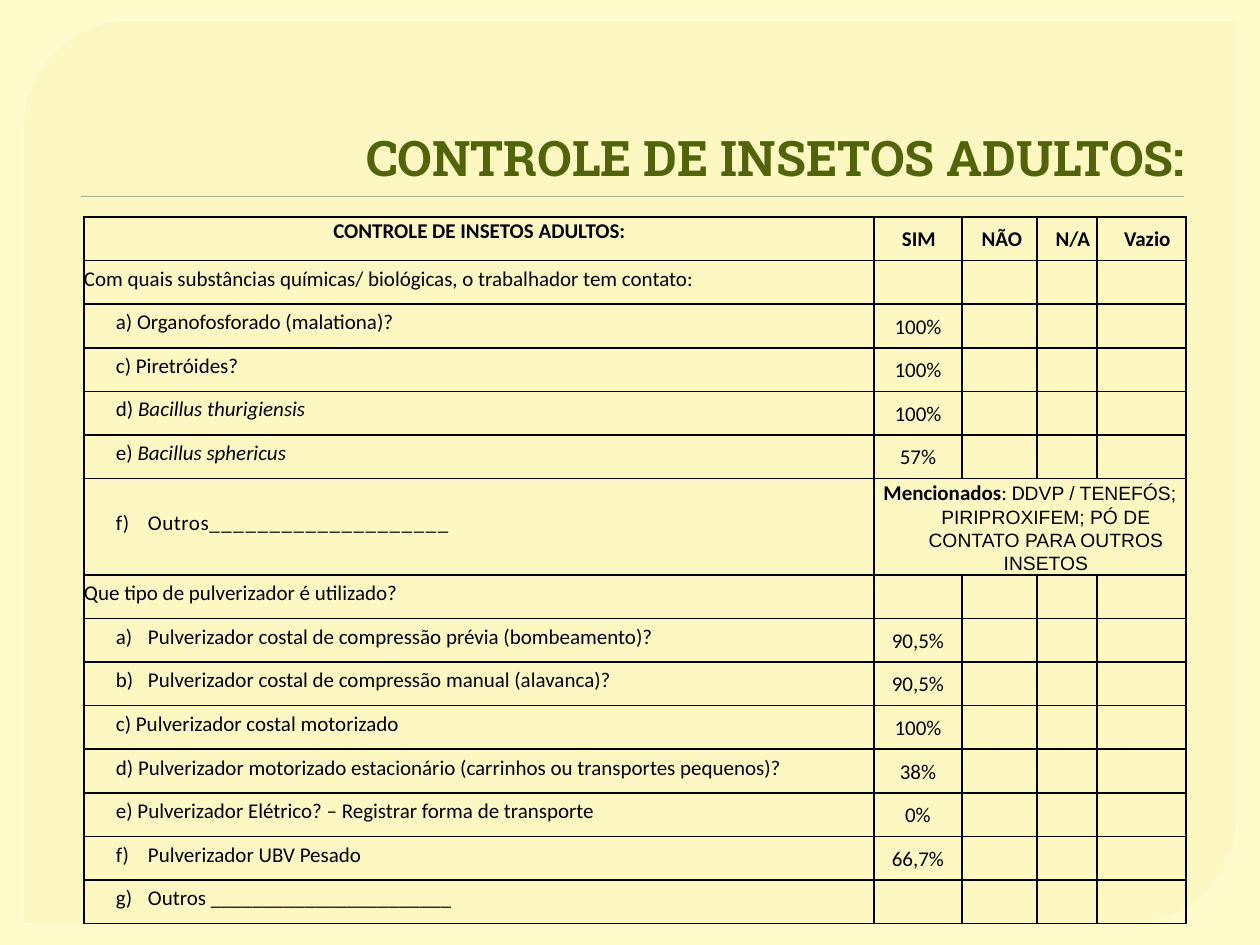
from lxml.etree import SubElement
from pptx import Presentation
from pptx.dml.color import RGBColor
from pptx.enum.shapes import MSO_SHAPE
from pptx.enum.text import MSO_ANCHOR, MSO_AUTO_SIZE, PP_ALIGN
from pptx.oxml.ns import qn
from pptx.util import Emu, Pt

SCALE = 914400 / 126
HANG = -32
COLUMNS = [790, 88, 75, 60, 89]
ROW_HEIGHT, MENTIONED_HEIGHT = 611 / 14, 96
HEADERS = [("CONTROLE DE INSETOS ADULTOS:", 33), ("SIM", 34), ("NÃO", 37), ("N/A", 44), ("Vazio", 44)]
MENTIONED = [
    ("Mencionados", {"bold": True}),
    (": D", {}),
    ("DVP / TENEFÓS; PIRIPROXIFEM; PÓ DE CONTATO PARA OUTROS INSETOS", {"size": Pt(11), "name": "Arial"}),
]
SUBSTANCES = [
    ("Com quais substâncias químicas/ biológicas, o trabalhador tem contato:", ""),
    ("a) Organofosforado (malationa)?", "100%"),
    ("c) Piretróides?", "100%"),
    ([("d) ", {}), ("Bacillus thurigiensis", {"italic": True})], "100%"),
    ([("e) ", {}), ("Bacillus sphericus", {"italic": True})], "57%"),
    ([("f)\t", {"spc": 20}), ("Outros", {"spc": 30}), ("_" * 20, {"spc": 90})], MENTIONED),
]
SPRAYERS = [
    ("Que tipo de pulverizador é utilizado?", ""),
    ("a)\tPulverizador costal de compressão prévia (bombeamento)?", "90,5%"),
    ("b)\tPulverizador costal de compressão manual (alavanca)?", "90,5%"),
    ("c) Pulverizador costal motorizado", "100%"),
    ("d) Pulverizador motorizado estacionário (carrinhos ou transportes pequenos)?", "38%"),
    ("e) Pulverizador Elétrico? – Registrar forma de transporte", "0%"),
    ("f)\tPulverizador UBV Pesado", "66,7%"),
    ("g)\tOutros " + "_" * 23, ""),
]


def px(n):
    """Turn pixels into EMU."""
    return Emu(round(n * SCALE))


def rgb(value):
    """Turn a hex string into a colour."""
    return RGBColor.from_string(value)


def set_alpha(fill_parent, percent):
    """Make the solid fill directly inside an element partly transparent."""
    color = fill_parent.find(qn("a:solidFill"))[0]
    SubElement(color, qn("a:alpha"), val=str(percent * 1000))


def add_plate(s, kind, box, color):
    """Add a plain filled shape behind the title."""
    sp = s.shapes.add_shape(kind, *map(px, box))
    sp.shadow.inherit = False
    sp.fill.solid()
    sp.fill.fore_color.rgb = rgb(color)
    sp.line.fill.background()
    s.shapes.title.element.addprevious(sp.element)
    return sp


def add_panel(s):
    """Add the translucent background panel with two rounded corners."""
    sp = add_plate(s, MSO_SHAPE.ROUND_2_DIAG_RECTANGLE, (23, 20, 1214, 904), "FDF8BE")
    sp.adjustments[0], sp.adjustments[1] = 0.118, 0
    sp.line.color.rgb = rgb("FFFCD6")
    sp.line.width = Pt(0.87)
    set_alpha(sp.element.spPr, 65)
    set_alpha(sp.element.spPr.find(qn("a:ln")), 88)


def set_title(s, text):
    """Place and format the title placeholder."""
    sp = s.shapes.title
    sp.left, sp.top, sp.width, sp.height = map(px, (63, 35, 1134, 158))
    tf = sp.text_frame
    tf.text = text
    tf.auto_size = MSO_AUTO_SIZE.NONE
    tf.vertical_anchor = MSO_ANCHOR.BOTTOM
    p = tf.paragraphs[0]
    p.alignment = PP_ALIGN.RIGHT
    p.font.name, p.font.size, p.font.bold = "Roboto Slab", Pt(28), True
    p.font.color.rgb = rgb("506508")


def format_cell(cell):
    """Give a cell black borders, no fill and no margins."""
    tcPr = cell._tc.get_or_add_tcPr()
    for side in ("lnL", "lnR", "lnT", "lnB"):
        ln = SubElement(tcPr, qn(f"a:{side}"), w=str(Pt(1)))
        SubElement(SubElement(ln, qn("a:solidFill")), qn("a:srgbClr"), val="000000")
    cell.fill.background()
    cell.margin_left = cell.margin_right = cell.margin_top = cell.margin_bottom = 0
    cell.vertical_anchor = MSO_ANCHOR.MIDDLE
    cell.text_frame.paragraphs[0].font.size = Pt(12)


def write_cell(cell, content, margin, spacing, before=0, align=PP_ALIGN.LEFT, bold=False, hang=HANG):
    """Write a string or a list of formatted runs into a cell."""
    p = cell.text_frame.paragraphs[0]
    p.alignment, p.line_spacing, p.space_before = align, spacing, Pt(before)
    pPr = p._p.get_or_add_pPr()
    pPr.set("marL", str(px(margin)))
    pPr.set("indent", str(px(hang)))
    p.font.name, p.font.size, p.font.bold = "Calibri", Pt(12), bold
    p.font.color.rgb = rgb("000000")
    for text, formats in [(content, {})] if isinstance(content, str) else content:
        r = p.add_run()
        r.text = text
        for name, value in formats.items():
            if name == "spc":
                r._r.get_or_add_rPr().set("spc", str(value))
            else:
                setattr(r.font, name, value)


def fill_section(table, first, rows, spacing, before):
    """Write a section: a question followed by its indented items and answers."""
    for i, (label, answer) in enumerate(rows):
        margin, hang = (64, HANG) if i else (48, -48)
        write_cell(table.cell(first + i, 0), label, margin, Pt(spacing), before, hang=hang)
        if answer:
            write_cell(table.cell(first + i, 1), answer, 32, 1.07, align=PP_ALIGN.CENTER)


def add_survey_table(s):
    """Add the survey table."""
    count = 1 + len(SUBSTANCES) + len(SPRAYERS)
    mentioned_row = len(SUBSTANCES)
    height = ROW_HEIGHT * (count - 1) + MENTIONED_HEIGHT
    frame = s.shapes.add_table(count, len(COLUMNS), px(84), px(217), px(sum(COLUMNS)), px(height))
    table = frame.table
    table.first_row = table.horz_banding = False
    for column, width in zip(table.columns, COLUMNS):
        column.width = px(width)
    for i, row in enumerate(table.rows):
        row.height = px(MENTIONED_HEIGHT if i == mentioned_row else ROW_HEIGHT)
    for cell in table.iter_cells():
        format_cell(cell)
    table.cell(mentioned_row, 1).merge(table.cell(mentioned_row, len(COLUMNS) - 1))
    for i, (text, margin) in enumerate(HEADERS):
        write_cell(table.cell(0, i), text, margin, 1.07, 0.6 if i else 6.2, PP_ALIGN.CENTER, True)
    table.cell(0, 0).vertical_anchor = MSO_ANCHOR.TOP
    fill_section(table, 1, SUBSTANCES, 10.7, 0.1)
    fill_section(table, mentioned_row + 1, SPRAYERS, 11.2, 0.7)


def main():
    """Build the slide and save it."""
    prs = Presentation()
    prs.slide_width, prs.slide_height = px(1260), px(945)
    s = prs.slides.add_slide(prs.slide_layouts[5])
    s.background.fill.solid()
    s.background.fill.fore_color.rgb = rgb("FEFAC9")
    add_panel(s)
    add_plate(s, MSO_SHAPE.RECTANGLE, (81, 196, 1103, 1), "A5B592")
    set_title(s, "CONTROLE DE INSETOS ADULTOS:")
    add_survey_table(s)
    prs.save("out.pptx")


if __name__ == "__main__":
    main()
